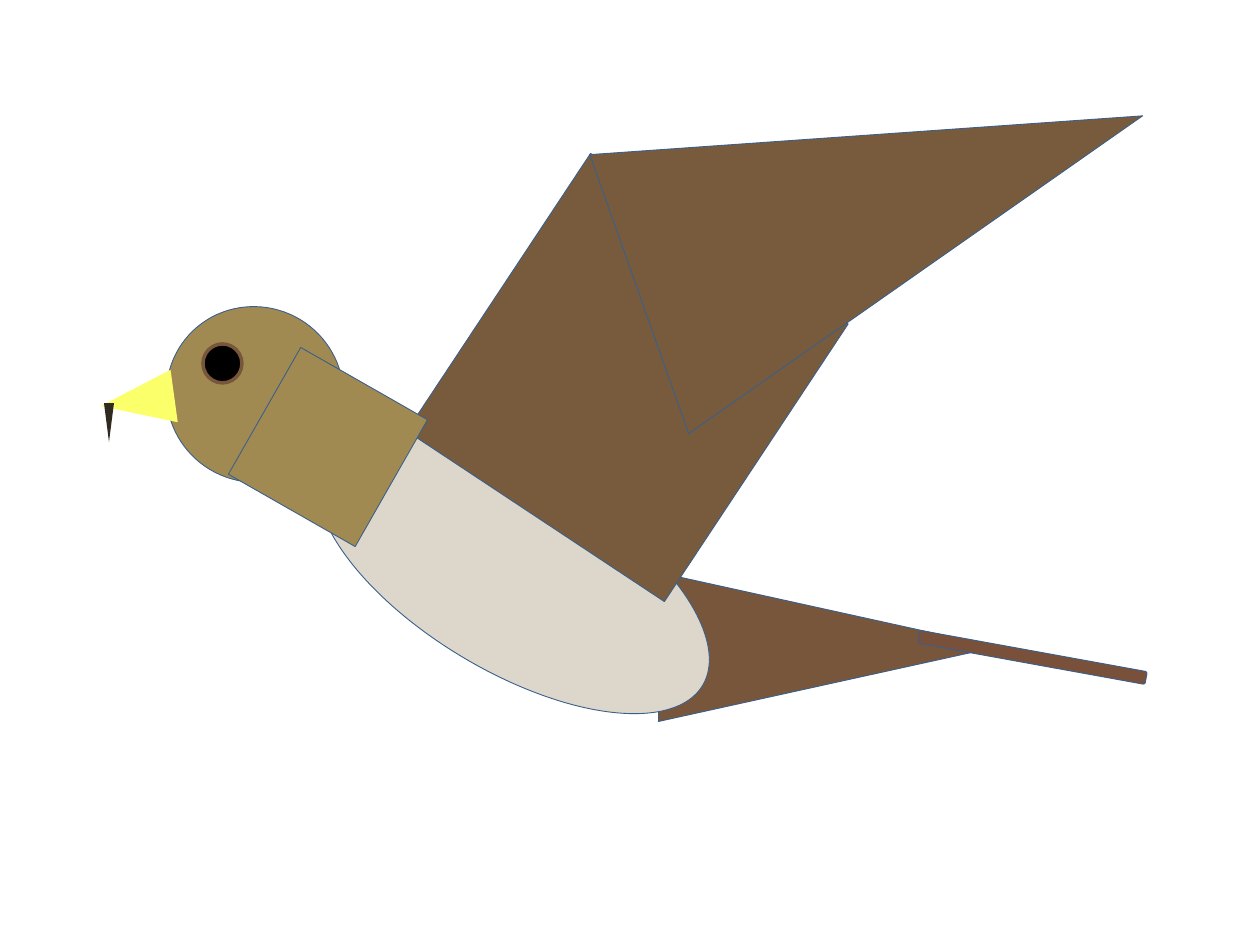
from dataclasses import dataclass

import pptx
import pptx.dml.color
import pptx.enum.shapes
import pptx.util

EMU_PER_PX = 914400 // 126
SHAPE = pptx.enum.shapes.MSO_SHAPE


@dataclass(frozen=True)
class Theme:
    outline: str = "3A5F8C"
    tail: str = "78563C"
    tail_streamer: str = "79513B"
    belly: str = "DCD7CA"
    head: str = "A18A51"
    wing: str = "785B3C"
    pupil: str = "000000"
    beak: str = "FBFF69"
    beak_tip: str = "302A20"
    thin: float = 0.5
    thick: float = 2


THEME = Theme()


def px(length):
    return pptx.util.Emu(length * EMU_PER_PX)


def rgb(color):
    return pptx.dml.color.RGBColor.from_string(color)


def add_part(slide, kind, box, color, rotation=0):
    shape = slide.shapes.add_shape(kind, *map(px, box))
    shape.rotation = rotation
    shape.shadow.inherit = False
    shape.fill.solid()
    shape.fill.fore_color.rgb = rgb(color)
    shape.line.fill.background()
    return shape


def add_outlined_part(slide, kind, box, color, rotation=0, outline=THEME.outline, width=THEME.thin):
    shape = add_part(slide, kind, box, color, rotation)
    shape.line.color.rgb = rgb(outline)
    shape.line.width = pptx.util.Pt(width)
    return shape


def add_tail(slide):
    add_outlined_part(slide, SHAPE.ISOSCELES_TRIANGLE, (753, 478, 149, 338), THEME.tail, 90)
    add_outlined_part(slide, SHAPE.ROUNDED_RECTANGLE, (917, 651, 231, 13), THEME.tail_streamer, 10.3)


def add_body(slide):
    add_outlined_part(slide, SHAPE.OVAL, (292, 473, 442, 198), THEME.belly, 30.9)
    add_outlined_part(slide, SHAPE.OVAL, (166, 307, 178, 175), THEME.head, 30.9)
    add_outlined_part(slide, SHAPE.RECTANGLE, (461, 223, 333, 309), THEME.wing, 303.5)
    add_outlined_part(slide, SHAPE.RECTANGLE, (255, 374, 146, 146), THEME.head, 299.7)
    add_outlined_part(slide, SHAPE.ISOSCELES_TRIANGLE, (743, -62, 296, 534), THEME.wing, 70.5)


def add_face(slide):
    add_outlined_part(slide, SHAPE.OVAL, (203, 344, 39, 39), THEME.pupil,
                      outline=THEME.tail, width=THEME.thick)
    add_part(slide, SHAPE.ISOSCELES_TRIANGLE, (111, 364, 53, 74), THEME.beak, 262.2)
    add_part(slide, SHAPE.ISOSCELES_TRIANGLE, (104, 403, 10, 39), THEME.beak_tip, 180)


def main():
    presentation = pptx.Presentation()
    presentation.slide_width = px(1260)
    presentation.slide_height = px(945)
    slide = presentation.slides.add_slide(presentation.slide_layouts[6])
    add_tail(slide)
    add_body(slide)
    add_face(slide)
    presentation.save("out.pptx")


if __name__ == "__main__":
    main()
